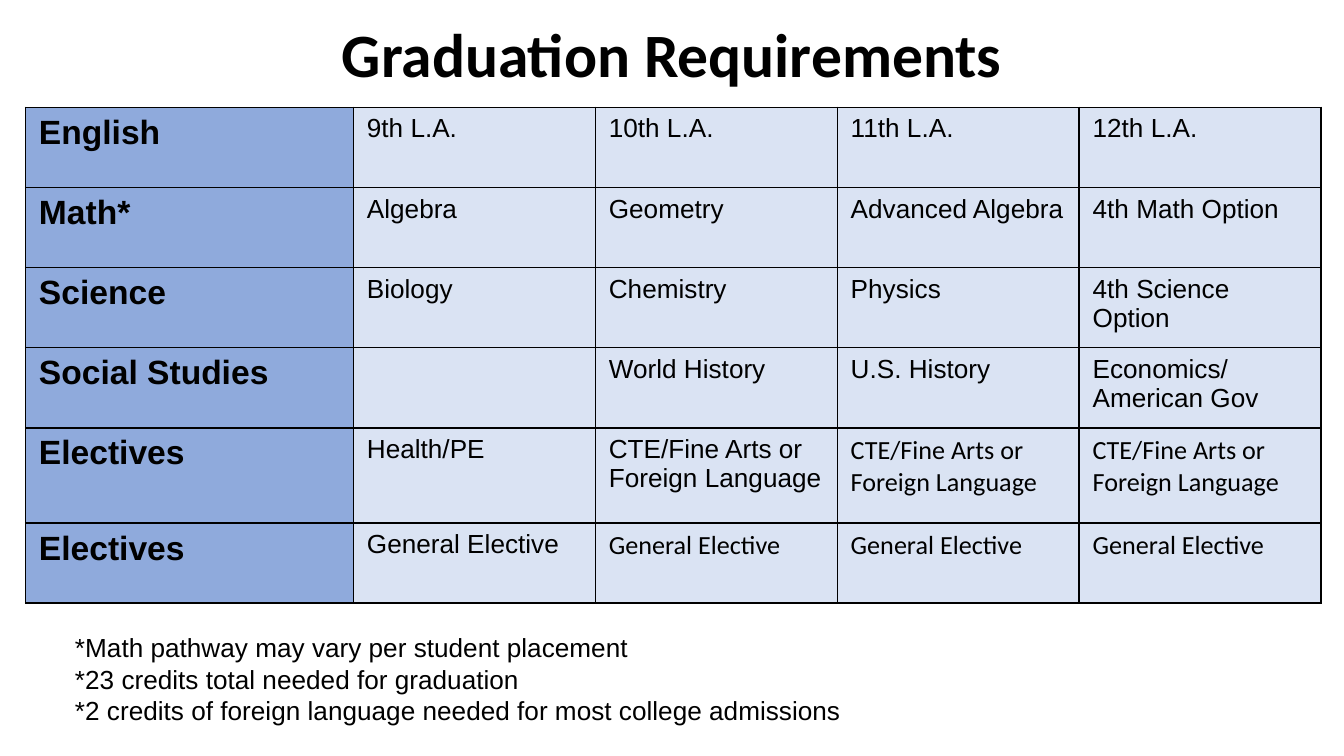
from dataclasses import dataclass

from lxml.etree import SubElement
from pptx import Presentation
from pptx.dml.color import RGBColor
from pptx.enum.text import MSO_ANCHOR, MSO_AUTO_SIZE, PP_ALIGN
from pptx.oxml.ns import qn
from pptx.slide import Slide
from pptx.table import _Cell
from pptx.text.text import _Paragraph
from pptx.util import Inches, Pt


@dataclass(frozen=True)
class Theme:
    ink: str = "000000"
    subject_fill: str = "8FAADC"
    course_fill: str = "DAE3F3"
    body_font: str = "Arial"
    accent_font: str = "Calibri"
    title_size: int = 33
    subject_size: int = 18
    body_size: int = 14
    border_width: int = 1


@dataclass(frozen=True)
class Subject:
    name: str
    courses: tuple[str, ...]
    height: float
    accent_from: int = 4


THEME = Theme()
COLUMN_WIDTHS = (2.44, 1.8, 1.8, 1.8, 1.8)
TABLE_HEIGHT = 3.69
TALL_ROW = 0.71
ROW = (TABLE_HEIGHT - TALL_ROW) / 5
ELECTIVE = "CTE/Fine Arts or Foreign Language"
SUBJECTS = (
    Subject("English", ("9th L.A.", "10th L.A.", "11th L.A.", "12th L.A."), ROW),
    Subject("Math*", ("Algebra", "Geometry", "Advanced Algebra", "4th Math Option"), ROW),
    Subject("Science", ("Biology", "Chemistry", "Physics", "4th Science Option"), ROW),
    Subject("Social Studies", ("", "World History", "U.S. History", "Economics/ American Gov"), ROW),
    Subject("Electives", ("Health/PE",) + (ELECTIVE,) * 3, TALL_ROW, accent_from=2),
    Subject("Electives", ("General Elective",) * 4, ROW, accent_from=1),
)
NOTES = (
    "*Math pathway may vary per student placement",
    "*23 credits total needed for graduation",
    "*2 credits of foreign language needed for most college admissions",
)


def write(p: _Paragraph, text: str, size: int, font: str, bold: bool = False) -> None:
    p.text = text
    p.font.size = Pt(size)
    p.font.name = font
    p.font.bold = bold
    p.font.color.rgb = RGBColor.from_string(THEME.ink)


def add_borders(cell: _Cell) -> None:
    tcPr = cell._tc.get_or_add_tcPr()
    for side in ("a:lnL", "a:lnR", "a:lnT", "a:lnB"):
        ln = SubElement(tcPr, qn(side), w=str(Pt(THEME.border_width)))
        fill = SubElement(ln, qn("a:solidFill"))
        SubElement(fill, qn("a:srgbClr"), val=THEME.ink)


def fill_cell(cell: _Cell, text: str, color: str, size: int, font: str, bold: bool = False) -> None:
    add_borders(cell)
    cell.fill.solid()
    cell.fill.fore_color.rgb = RGBColor.from_string(color)
    write(cell.text_frame.paragraphs[0], text, size, font, bold)


def add_title(s: Slide, text: str) -> None:
    sp = s.shapes.title
    sp.left, sp.top, sp.width, sp.height = (Inches(v) for v in (0.69, -0.12, 8.62, 1.09))
    tf = sp.text_frame
    tf.vertical_anchor = MSO_ANCHOR.MIDDLE
    p = tf.paragraphs[0]
    write(p, text, THEME.title_size, THEME.accent_font, bold=True)
    p.alignment = PP_ALIGN.CENTER
    p.line_spacing = 0.9


def add_requirements(s: Slide, subjects: tuple[Subject, ...]) -> None:
    table = s.shapes.add_table(
        len(subjects), len(COLUMN_WIDTHS),
        Inches(0.19), Inches(0.8),
        Inches(sum(COLUMN_WIDTHS)), Inches(TABLE_HEIGHT),
    ).table
    table.first_row = False
    table.horz_banding = False
    for column, width in zip(table.columns, COLUMN_WIDTHS):
        column.width = Inches(width)
    for row, subject in zip(table.rows, subjects):
        row.height = Inches(subject.height)
        name_cell, *course_cells = row.cells
        fill_cell(name_cell, subject.name, THEME.subject_fill, THEME.subject_size, THEME.body_font, bold=True)
        for i, (cell, course) in enumerate(zip(course_cells, subject.courses)):
            font = THEME.accent_font if i >= subject.accent_from else THEME.body_font
            fill_cell(cell, course, THEME.course_fill, THEME.body_size, font)


def add_notes(s: Slide, notes: tuple[str, ...]) -> None:
    sp = s.shapes.add_textbox(Inches(0.46), Inches(4.65), Inches(7.94), Inches(0.81))
    tf = sp.text_frame
    tf.word_wrap = True
    tf.auto_size = MSO_AUTO_SIZE.SHAPE_TO_FIT_TEXT
    for i, note in enumerate(notes):
        p = tf.add_paragraph() if i else tf.paragraphs[0]
        write(p, note, THEME.body_size, THEME.body_font)


def main() -> None:
    prs = Presentation()
    prs.slide_width = Inches(10)
    prs.slide_height = prs.slide_width * 9 // 16
    s = prs.slides.add_slide(prs.slide_layouts[5])
    add_title(s, "Graduation Requirements")
    add_requirements(s, SUBJECTS)
    add_notes(s, NOTES)
    prs.save("out.pptx")


if __name__ == "__main__":
    main()
